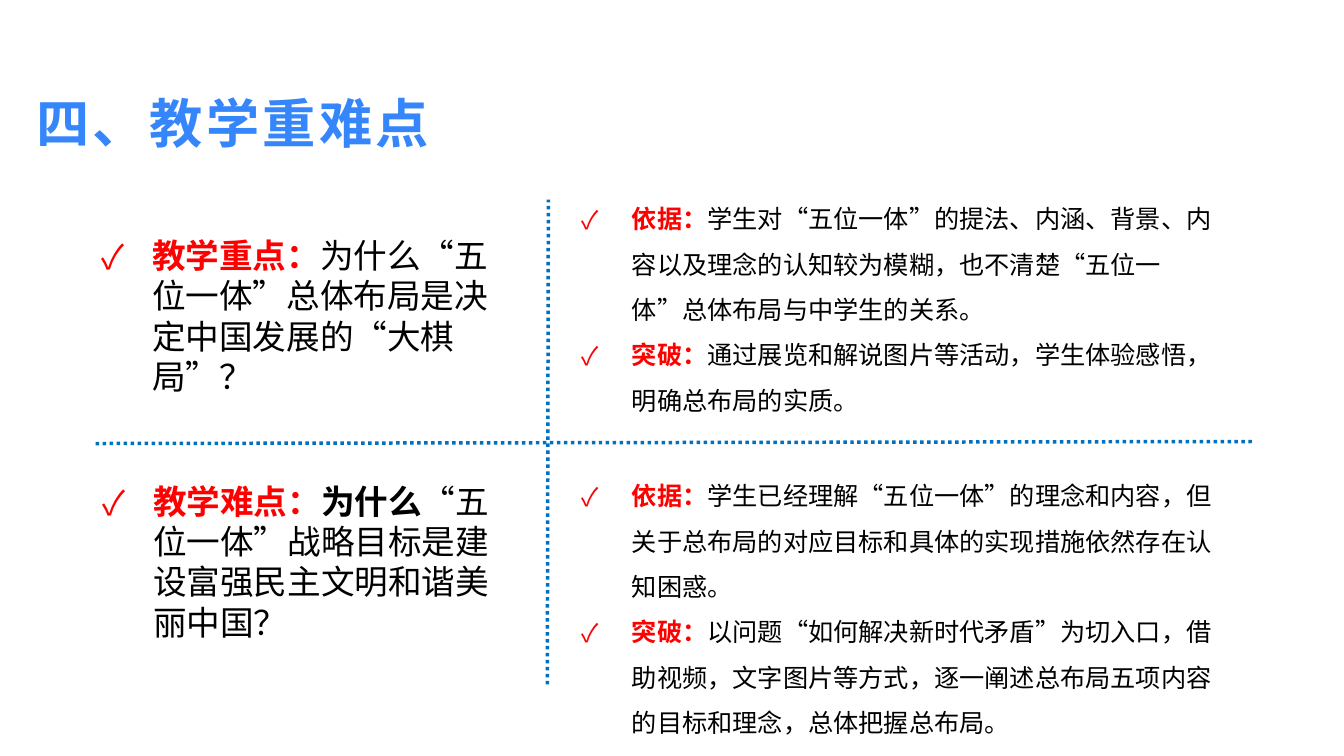
from dataclasses import dataclass

from lxml import etree
from pptx import Presentation
from pptx.dml.color import RGBColor
from pptx.enum.dml import MSO_LINE
from pptx.enum.lang import MSO_LANGUAGE_ID
from pptx.enum.shapes import MSO_CONNECTOR
from pptx.enum.text import MSO_ANCHOR, MSO_AUTO_SIZE
from pptx.oxml.ns import qn
from pptx.slide import Slide
from pptx.util import Inches, Pt

STRAIGHT = MSO_CONNECTOR.STRAIGHT
DOTTED = MSO_LINE.ROUND_DOT
MIDDLE, TOP = MSO_ANCHOR.MIDDLE, MSO_ANCHOR.TOP
GROW, FIXED = MSO_AUTO_SIZE.SHAPE_TO_FIT_TEXT, MSO_AUTO_SIZE.NONE
CHINESE = MSO_LANGUAGE_ID.SIMPLIFIED_CHINESE

BLUE = RGBColor(0x35, 0x86, 0xFB)
RULE_BLUE = RGBColor(0x00, 0x70, 0xC0)
RED = RGBColor(0xFF, 0x00, 0x00)
BLACK = RGBColor(0x00, 0x00, 0x00)
FONT = "Noto Sans CJK SC"

# Grid of 40 columns by 30 rows
SLIDE_WIDTH, SLIDE_HEIGHT = Inches(13.33), Inches(7.5)
COLUMN, ROW = SLIDE_WIDTH / 40, SLIDE_HEIGHT / 30
HANGING_INDENT = round(1.5 * COLUMN)

TITLE_FORMAT = {"size": Pt(38), "bold": True}
TITLE_FRAME = {
    "word_wrap": True, "auto_size": FIXED, "vertical_anchor": MIDDLE,
    "margin_left": Inches(0.07), "margin_right": Inches(0.07),
    "margin_top": Inches(0.03), "margin_bottom": Inches(0.03),
}
BODY_FRAME = {"word_wrap": True, "auto_size": GROW, "vertical_anchor": TOP}


@dataclass
class Area:
    column: float
    row: float
    columns: float
    rows: float


@dataclass
class Point:
    label: str
    body: str
    emphasis: str = ""


@dataclass
class Panel:
    area: Area
    size: int
    line_spacing: float
    points: list[Point]


@dataclass
class Divider:
    start: tuple[float, float]
    end: tuple[float, float]


PANELS = [
    Panel(Area(2.73, 9.12, 12.27, 6.88), 24, 1.0, [
        Point("教学重点：", "为什么“五位一体”总体布局是决定中国发展的“大棋局”？"),
    ]),
    Panel(Area(2.76, 18.88, 12.45, 6.88), 24, 1.0, [
        Point("教学难点：", "“五位一体”战略目标是建设富强民主文明和谐美丽中国？", "为什么"),
    ]),
    Panel(Area(17.01, 7.28, 19.38, 9.48), 18, 1.5, [
        Point("依据：", "学生对“五位一体”的提法、内涵、背景、内容以及理念的认知较为模糊，"
                      "也不清楚“五位一体”总体布局与中学生的关系。"),
        Point("突破：", "通过展览和解说图片等活动，学生体验感悟，明确总布局的实质。"),
    ]),
    Panel(Area(17.01, 18.28, 19.65, 11.08), 18, 1.5, [
        Point("依据：", "学生已经理解“五位一体”的理念和内容，"
                      "但关于总布局的对应目标和具体的实现措施依然存在认知困惑。"),
        Point("突破：", "以问题“如何解决新时代矛盾”为切入口，借助视频，文字图片等方式，"
                      "逐一阐述总布局五项内容的目标和理念，总体把握总布局。"),
    ]),
]
DIVIDERS = [
    Divider((2.85, 17.6), (37.35, 17.52)),
    Divider((16.29, 27.16), (16.32, 7.92)),
]


def set_values(target, values: dict) -> None:
    for name, value in values.items():
        setattr(target, name, value)


def add_frame(slide: Slide, area: Area, values: dict):
    shape = slide.shapes.add_textbox(
        round(area.column * COLUMN), round(area.row * ROW),
        round(area.columns * COLUMN), round(area.rows * ROW))
    set_values(shape.text_frame, values)
    return shape.text_frame


def add_run(paragraph, text: str, color: RGBColor, values: dict):
    run = paragraph.add_run()
    run.text = text
    set_values(run.font, {"name": FONT, "language_id": CHINESE, **values})
    run.font.color.rgb = color
    properties = run.font._element
    etree.SubElement(properties, qn("a:ea"), typeface=FONT)
    return properties


def add_check_bullet(paragraph) -> None:
    properties = paragraph._p.get_or_add_pPr()
    properties.set("marL", str(HANGING_INDENT))
    properties.set("indent", str(-HANGING_INDENT))
    color = etree.SubElement(properties, qn("a:buClr"))
    etree.SubElement(color, qn("a:srgbClr"), val=str(RED))
    etree.SubElement(properties, qn("a:buFont"), typeface=FONT)
    etree.SubElement(properties, qn("a:buChar"), char="✓")


def add_panel(slide: Slide, panel: Panel) -> None:
    frame = add_frame(slide, panel.area, BODY_FRAME)
    for index, point in enumerate(panel.points):
        paragraph = frame.add_paragraph() if index else frame.paragraphs[0]
        add_check_bullet(paragraph)
        paragraph.line_spacing = panel.line_spacing
        for text, color, bold in ((point.label, RED, True),
                                  (point.emphasis, BLACK, True),
                                  (point.body, BLACK, False)):
            if text:
                add_run(paragraph, text, color, {"size": Pt(panel.size), "bold": bold})


def add_divider(slide: Slide, divider: Divider) -> None:
    ends = [round(value * unit) for point in (divider.start, divider.end)
            for value, unit in zip(point, (COLUMN, ROW))]
    connector = slide.shapes.add_connector(STRAIGHT, *ends)
    set_values(connector.line, {"width": Pt(2.5), "dash_style": DOTTED})
    connector.line.color.rgb = RULE_BLUE
    etree.SubElement(connector._element.spPr, qn("a:effectLst"))


def main() -> None:
    presentation = Presentation()
    set_values(presentation, {"slide_width": SLIDE_WIDTH, "slide_height": SLIDE_HEIGHT})
    slide = presentation.slides.add_slide(presentation.slide_layouts[6])

    # Title
    title = add_frame(slide, Area(0.87, 3.2, 12.9, 3.32), TITLE_FRAME)
    properties = add_run(title.paragraphs[0], "四、教学重难点", BLUE, TITLE_FORMAT)
    properties.set("spc", "240")

    # Key and difficult points, each with its reasons
    for panel in PANELS:
        add_panel(slide, panel)

    # Dotted cross between the four panels
    for divider in DIVIDERS:
        add_divider(slide, divider)

    presentation.save("out.pptx")


if __name__ == "__main__":
    main()
